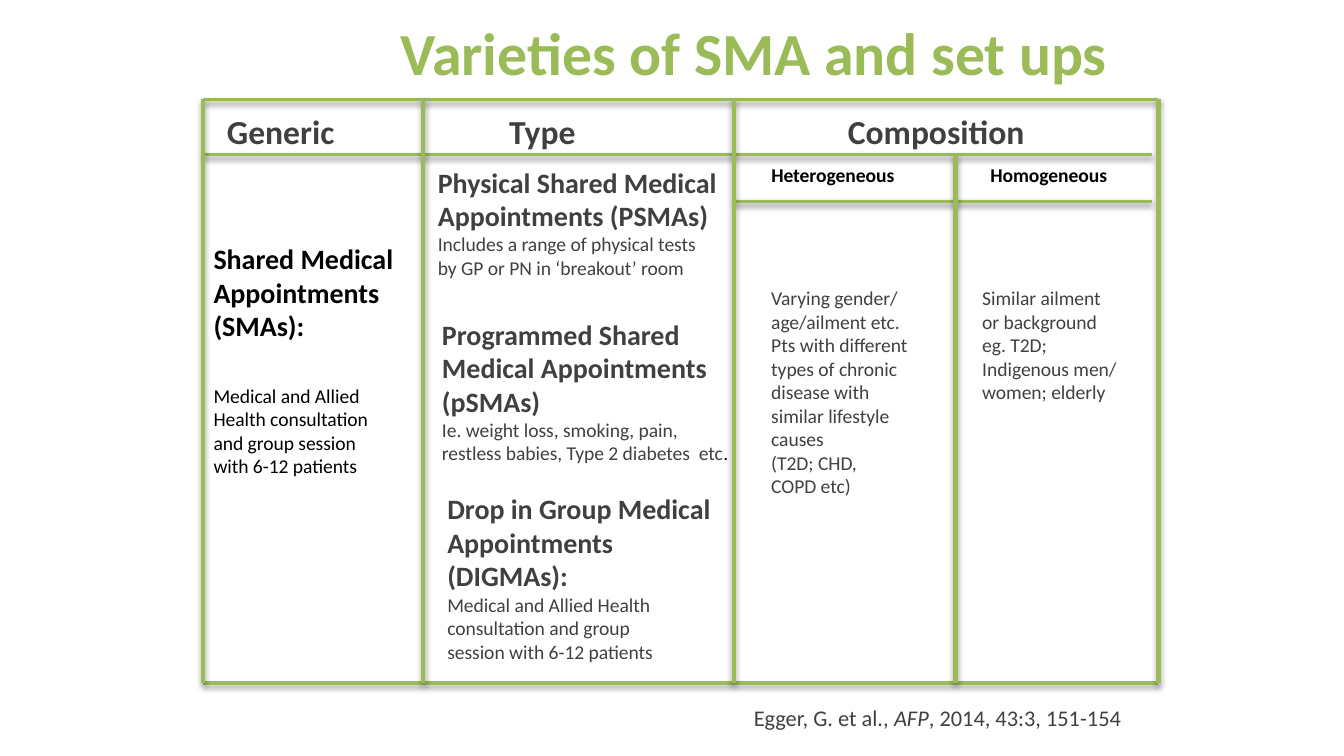
from collections import namedtuple

from lxml import etree
from pptx import Presentation
from pptx import util as u
from pptx.dml.color import RGBColor
from pptx.enum import shapes, text
from pptx.oxml.ns import qn

GREEN, GREY, BLACK = "9BBB59", "404040", "000000"
HEAD, BODY = 15, 10.5
WIDTH = 10
HEIGHT = WIDTH * 9 / 16
COLUMNS = [1.51, 3.15, 5.46, 7.11, 8.62]
ROWS = [0.74, 1.15, 1.5, 5.08]

Box = namedtuple("Box", "left top width height")
Run = namedtuple("Run", "words size color bold italic", defaults=(GREY, False, False))


def rgb(value):
    return RGBColor.from_string(value)


def cell(column, row, columns=1, rows=1):
    left, top = COLUMNS[column], ROWS[row]
    return Box(left, top, COLUMNS[column + columns] - left, ROWS[row + rows] - top)


def inside(box, dx, dy, width, height):
    """A box set in from the top left corner of another."""
    return Box(box.left + dx, box.top + dy, width, height)


def lines(words, size, color=GREY, bold=False):
    """One paragraph, of one run, for each line of words."""
    return [[Run(line, size, color, bold)] for line in words.split("\n")]


def set_tabs(paragraph, stops):
    tabs = etree.SubElement(paragraph._p.get_or_add_pPr(), qn("a:tabLst"))
    for stop in stops:
        etree.SubElement(tabs, qn("a:tab"), pos=str(u.Inches(stop)), algn="l")


def add_text(slide, box, paragraphs, gaps=None, stops=()):
    """gaps maps a paragraph's index to its space before, in points."""
    frame = slide.shapes.add_textbox(*map(u.Inches, box)).text_frame
    frame.word_wrap = True
    frame.auto_size = text.MSO_AUTO_SIZE.SHAPE_TO_FIT_TEXT
    for index, runs in enumerate(paragraphs):
        paragraph = frame.add_paragraph() if index else frame.paragraphs[0]
        if stops:
            set_tabs(paragraph, stops)
        if gaps and index in gaps:
            paragraph.space_before = u.Pt(gaps[index])
        for part in runs:
            run = paragraph.add_run()
            run.text = part.words
            run.font.name = "Calibri"
            run.font.size = u.Pt(part.size)
            run.font.bold = part.bold
            run.font.italic = part.italic
            run.font.color.rgb = rgb(part.color)


def add_rule(slide, x1, y1, x2, y2):
    rule = slide.shapes.add_connector(
        shapes.MSO_CONNECTOR.STRAIGHT, *map(u.Inches, (x1, y1, x2, y2)))
    rule.line.color.rgb = rgb(GREEN)
    rule.line.width = u.Pt(2 if y1 == y2 else 2.25)
    effects = etree.SubElement(rule._element.spPr, qn("a:effectLst"))
    shadow = etree.SubElement(effects, qn("a:outerShdw"), blurRad=str(u.Pt(3.1)),
                              dist=str(u.Pt(1.6)), dir="5400000", rotWithShape="0")
    color = etree.SubElement(shadow, qn("a:srgbClr"), val=BLACK)
    etree.SubElement(color, qn("a:alpha"), val="38000")


def add_grid(slide):
    left, right = COLUMNS[0], COLUMNS[-1]
    top, header, subheader, bottom = ROWS
    for start, end, y in [(left, right, top), (left, right - 0.05, header),
                          (COLUMNS[2], right - 0.05, subheader), (left, right, bottom)]:
        add_rule(slide, start, y, end, y)
    for index, x in enumerate(COLUMNS):
        add_rule(slide, x, header if index == 3 else top, x, bottom)


def add_headers(slide, header, subheader):
    add_text(slide, inside(header, 0.08, 0.04, 6.18, 0.4),
             lines("Generic\tType\tComposition", 18, GREY, True), stops=[2.1, 4.62])
    add_text(slide, inside(subheader, 0.18, 0.01, 2.75, 0.28),
             lines("Heterogeneous\tHomogeneous", BODY, BLACK, True), stops=[1.63])


def add_generic(slide, box):
    add_text(slide, inside(box, -0.02, 0.6, 1.55, 1.87),
             lines("Shared Medical\nAppointments\n(SMAs):", HEAD, BLACK, True)
             + lines("Medical and Allied\nHealth consultation\n"
                     "and group session\nwith 6-12 patients", BODY, BLACK),
             gaps={3: 22})


def add_types(slide, box):
    kinds = [
        (0.01, 0.03, 2.34, 1.14, "Physical Shared Medical\nAppointments (PSMAs)",
         "Includes a range of physical tests\nby GP or PN in ‘breakout’ room", ""),
        (0.04, 1.16, 2.38, 1.21, "Programmed Shared\nMedical Appointments\n(pSMAs)",
         "Ie. weight loss, smoking, pain,\nrestless babies, Type 2 diabetes  etc", "."),
        (0.08, 2.46, 2.27, 1.39, "Drop in Group Medical\nAppointments\n(DIGMAs):",
         "Medical and Allied Health\nconsultation and group\nsession with 6-12 patients", ""),
    ]
    for dx, dy, width, height, name, details, black_end in kinds:
        paragraphs = lines(name, HEAD, GREY, True) + lines(details, BODY)
        if black_end:
            paragraphs[-1].append(Run(black_end, BODY, BLACK))
        add_text(slide, inside(box, dx, dy, width, height), paragraphs)


def add_composition(slide, box, dx, width, details):
    paragraphs = lines(details, BODY)
    add_text(slide, inside(box, dx, 0.58, width, 0.1 + 0.18 * len(paragraphs)), paragraphs)


def main():
    deck = Presentation()
    deck.slide_width, deck.slide_height = u.Inches(WIDTH), u.Inches(HEIGHT)
    slide = deck.slides.add_slide(deck.slide_layouts[6])
    add_text(slide, Box(2.88, 0.07, 5.51, 0.64),
             lines("Varieties of SMA and set ups", 32, GREEN, True))
    add_grid(slide)
    add_headers(slide, cell(0, 0, columns=4), cell(2, 1, columns=2))
    add_generic(slide, cell(0, 1, rows=2))
    add_types(slide, cell(1, 1, rows=2))
    add_composition(slide, cell(2, 2), 0.18, 1.27,
                    "Varying gender/\nage/ailment etc.\nPts with different\n"
                    "types of chronic\ndisease with\nsimilar lifestyle\ncauses\n"
                    "(T2D; CHD,\nCOPD etc)")
    add_composition(slide, cell(3, 2), 0.1, 1.22,
                    "Similar ailment\nor background\neg. T2D;\n"
                    "Indigenous men/\nwomen; elderly")
    add_text(slide, Box(5.51, 5.19, 2.95, 0.3),
             [[Run("Egger, G. et al., ", 12), Run("AFP", 12, italic=True),
               Run(", 2014, 43:3, 151-154", 12)]])
    deck.save("out.pptx")


if __name__ == "__main__":
    main()
